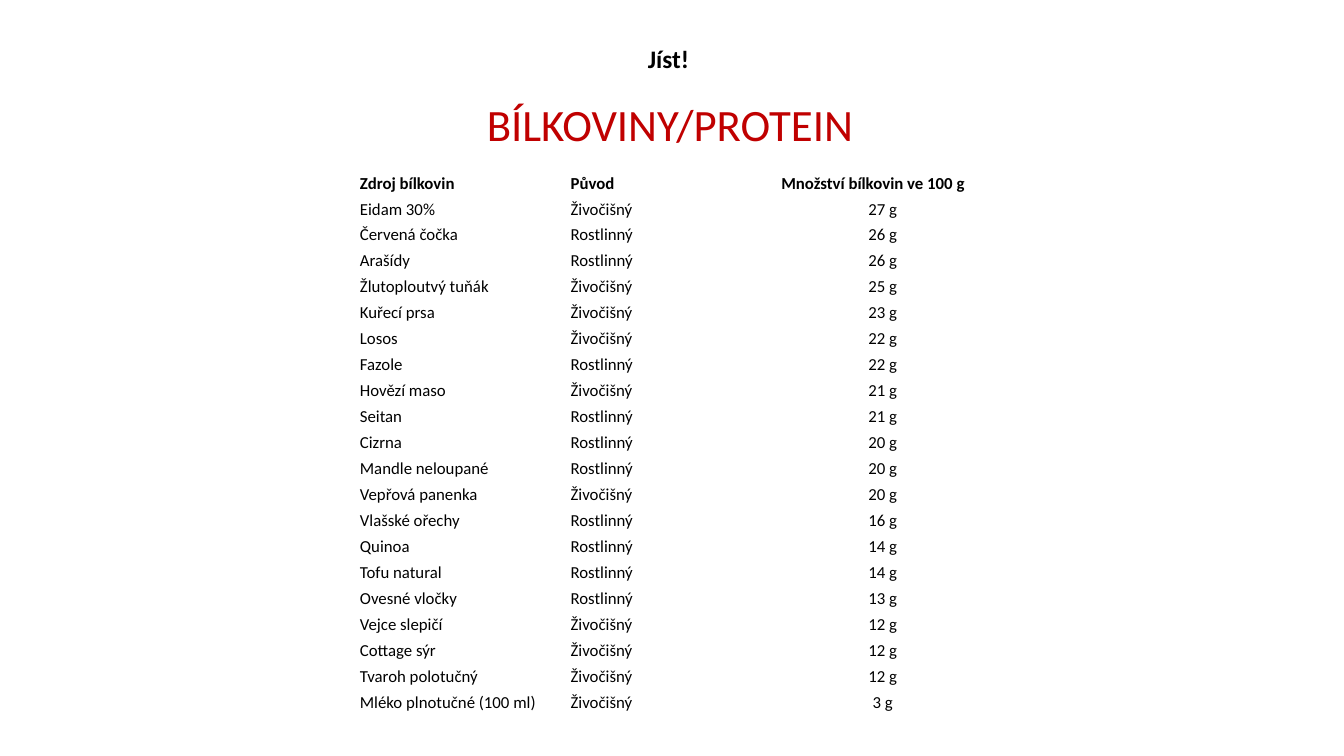
from dataclasses import dataclass
from typing import Optional

from pptx import Presentation
from pptx.dml.color import RGBColor
from pptx.enum.text import MSO_ANCHOR, MSO_AUTO_SIZE, PP_ALIGN as Align
from pptx.slide import Slide
from pptx.text.text import TextFrame
from pptx.util import Emu, Pt

FONT = "Calibri"
BLACK = "000000"
RED = "C00000"
ANIMAL = "Živočišný"
PLANT = "Rostlinný"


@dataclass(frozen=True)
class Box:
    left: int
    top: int
    width: int
    height: int


@dataclass(frozen=True)
class Food:
    name: str
    origin: str
    grams: int


HEADERS = ("Zdroj bílkovin", "Původ", "Množství bílkovin ve 100 g")
FOODS = (
    Food("Eidam 30%", ANIMAL, 27),
    Food("Červená čočka", PLANT, 26),
    Food("Arašídy", PLANT, 26),
    Food("Žlutoploutvý tuňák", ANIMAL, 25),
    Food("Kuřecí prsa", ANIMAL, 23),
    Food("Losos", ANIMAL, 22),
    Food("Fazole", PLANT, 22),
    Food("Hovězí maso", ANIMAL, 21),
    Food("Seitan", PLANT, 21),
    Food("Cizrna", PLANT, 20),
    Food("Mandle neloupané", PLANT, 20),
    Food("Vepřová panenka", ANIMAL, 20),
    Food("Vlašské ořechy", PLANT, 16),
    Food("Quinoa", PLANT, 14),
    Food("Tofu natural", PLANT, 14),
    Food("Ovesné vločky", PLANT, 13),
    Food("Vejce slepičí", ANIMAL, 12),
    Food("Cottage sýr", ANIMAL, 12),
    Food("Tvaroh polotučný", ANIMAL, 12),
    Food("Mléko plnotučné (100 ml)", ANIMAL, 3),
)


def px(n: int) -> Emu:
    """Turn px, 100 to the inch, into EMU."""
    return Emu(n * 9144)


def rgb(color: str) -> RGBColor:
    """Turn a hex string into a colour."""
    return RGBColor.from_string(color)


def write(tf: TextFrame, text: str, *, size: int, color: str = BLACK,
          bold: bool = False, align: Align = Align.LEFT,
          spacing: Optional[float] = None, after: int = 0) -> None:
    """Fill a text frame with one formatted paragraph."""
    p = tf.paragraphs[0]
    p.alignment = align
    p.line_spacing = spacing
    p.space_after = Pt(after)
    r = p.add_run()
    r.text = text
    r.font.name = FONT
    r.font.size = Pt(size)
    r.font.bold = bold
    r.font.color.rgb = rgb(color)


def add_text(s: Slide, box: Box, *, wrap: bool) -> TextFrame:
    """Add a text box that grows with its text."""
    tf = s.shapes.add_textbox(px(box.left), px(box.top),
                              px(box.width), px(box.height)).text_frame
    tf.word_wrap = wrap
    tf.auto_size = MSO_AUTO_SIZE.SHAPE_TO_FIT_TEXT
    return tf


def add_foods(s: Slide, box: Box) -> None:
    """Draw the table of protein sources."""
    rows = [HEADERS] + [(f.name, f.origin, f"{f.grams} g") for f in FOODS]
    table = s.shapes.add_table(len(rows), len(HEADERS), px(box.left), px(box.top),
                               px(box.width), px(box.height)).table
    table.horz_banding = False
    table.first_row = False
    for i, row in enumerate(rows):
        for j, text in enumerate(row):
            cell = table.cell(i, j)
            cell.fill.background()
            cell.vertical_anchor = MSO_ANCHOR.MIDDLE
            cell.margin_left = cell.margin_right = px(4)
            cell.margin_top = cell.margin_bottom = px(2)
            centred = i > 0 and j == 2
            write(cell.text_frame, text, size=12, bold=i == 0,
                  align=Align.CENTER if centred else Align.LEFT)


def main() -> None:
    """Build the slide and save it."""
    prs = Presentation()
    prs.slide_width, prs.slide_height = px(1333), px(750)
    s = prs.slides.add_slide(prs.slide_layouts[6])
    write(add_text(s, Box(18, 36, 1290, 41), wrap=True), "Jíst!", size=18,
          bold=True, align=Align.CENTER, spacing=1.07, after=8)
    write(add_text(s, Box(473, 91, 387, 64), wrap=False), "BÍLKOVINY/PROTEIN",
          size=32, color=RED)
    add_foods(s, Box(353, 169, 627, 541))
    prs.save("out.pptx")


if __name__ == "__main__":
    main()
